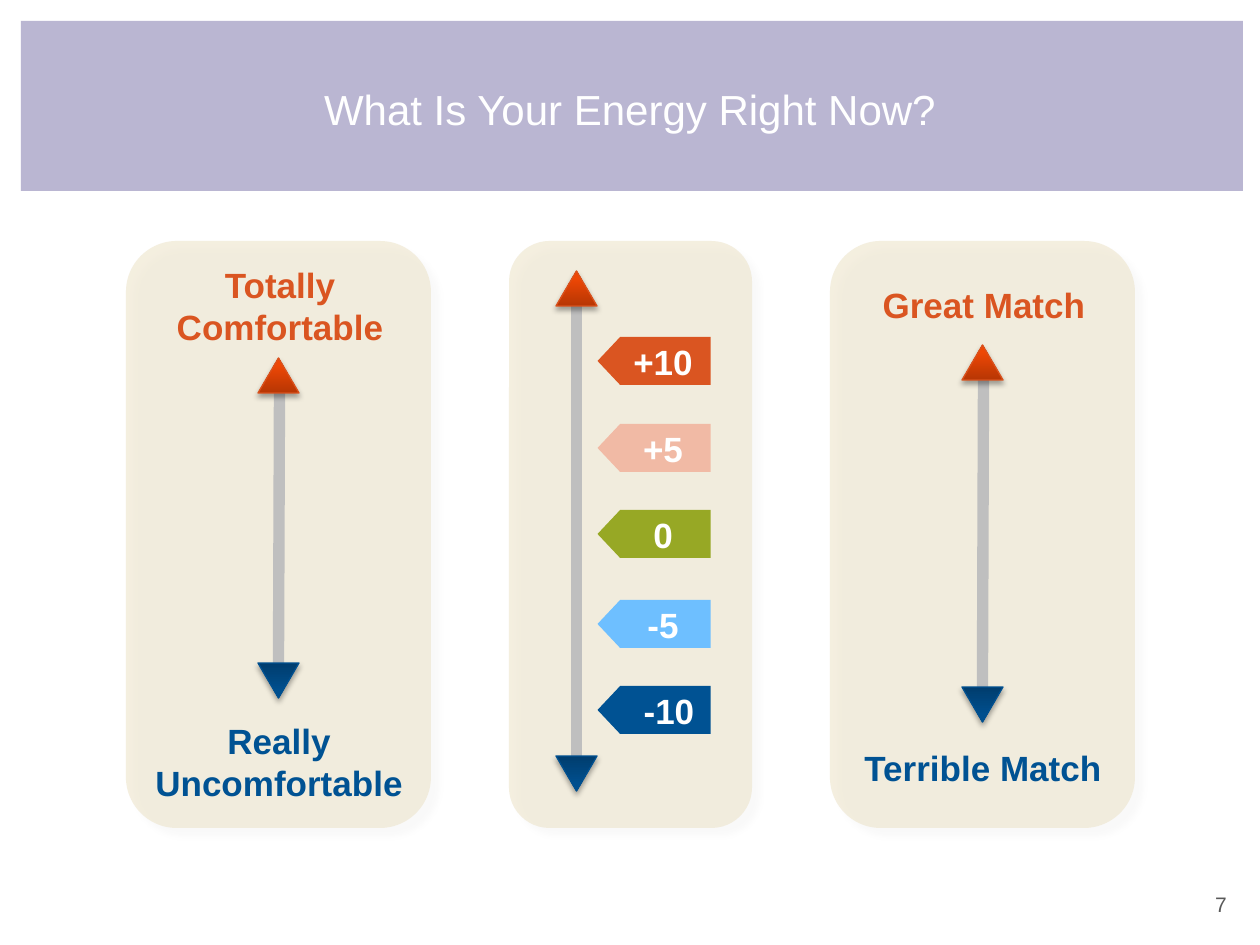
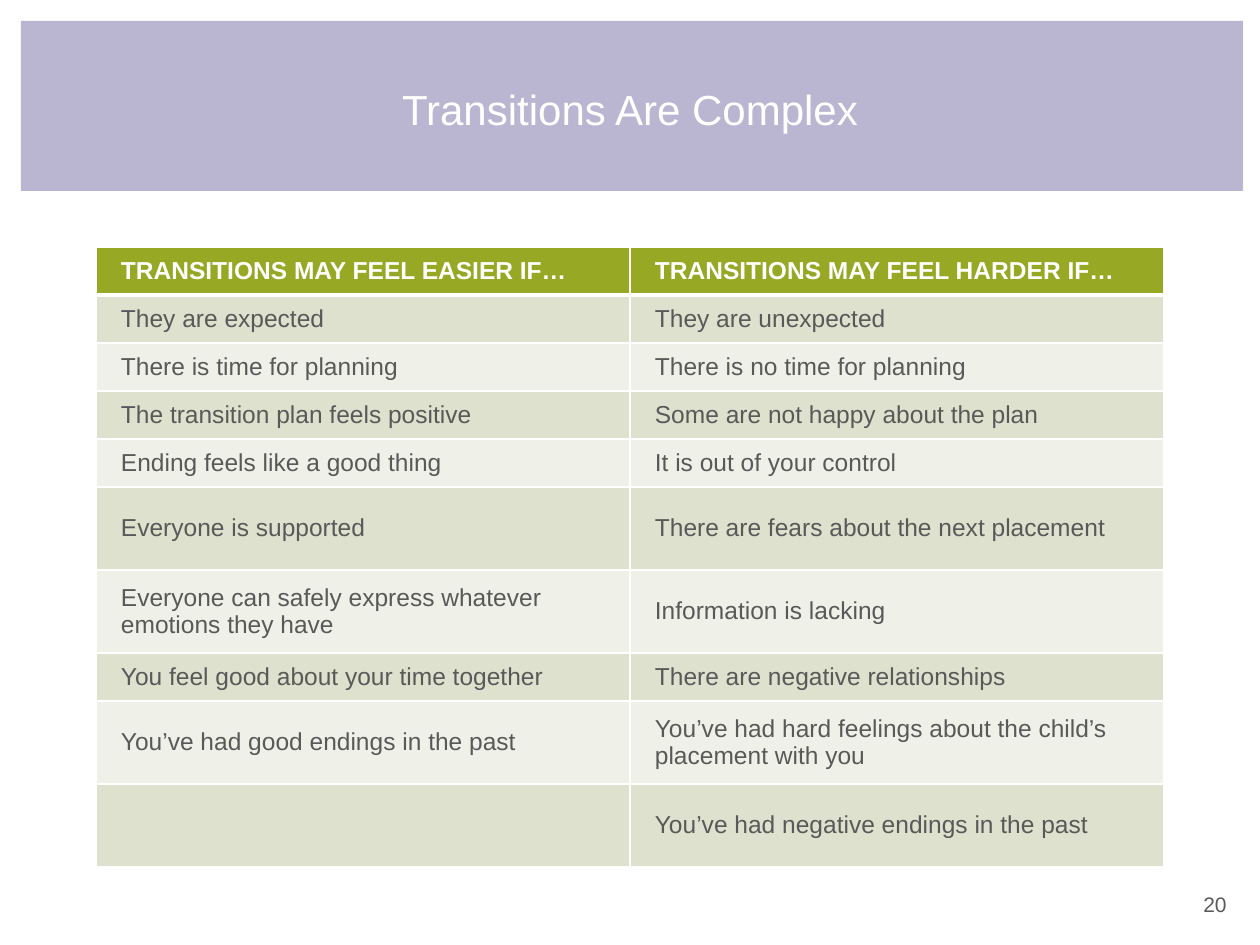
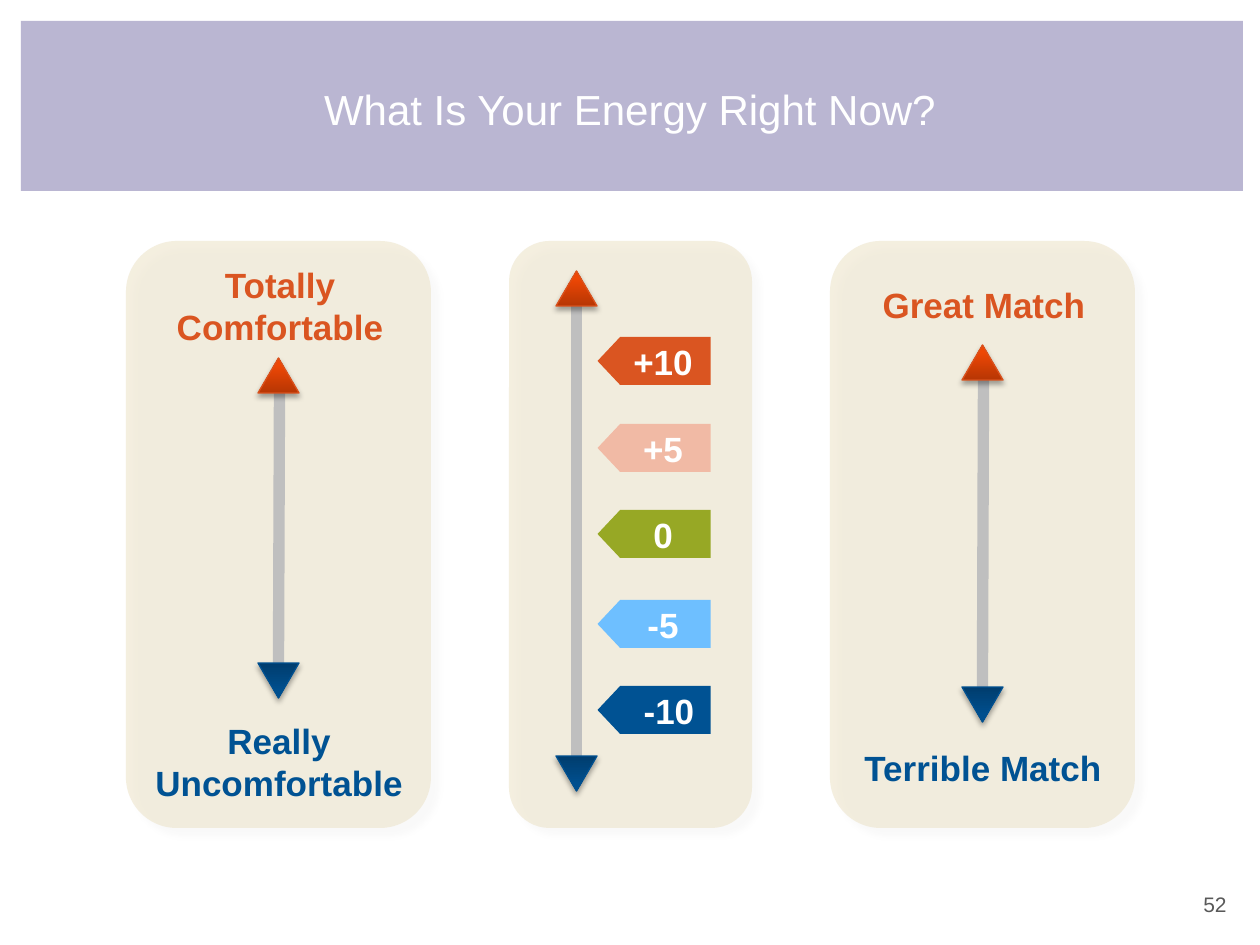
from pptx import Presentation
from pptx.dml.color import RGBColor
from pptx.enum.shapes import MSO_CONNECTOR, MSO_SHAPE
from pptx.enum.text import MSO_ANCHOR, PP_ALIGN
from pptx.oxml import parse_xml
from pptx.oxml.ns import nsdecls, qn
from pptx.util import Pt
from lxml.etree import SubElement

EMU_PER_PX = 914400 / 126
FONT = "Arial"
COLORS = {
    "band": "BAB6D2",
    "white": "FFFFFF",
    "text": "595959",
    "panel": "EDE4CA",
    "shaft": "BFBFBF",
    "high": "DA5521",
    "mid_high": "F1BAA5",
    "neutral": "97A825",
    "mid_low": "6EBFFF",
    "low": "005293",
    "row_dark": "DDE1CD",
    "row_light": "EFF1E8",
    "high_edge": "DA511C",
    "low_edge": "005090",
}
HIGH_GRADIENT = [(0, "B73604"), (80, "EE4705"), (100, "F44501")]
LOW_GRADIENT = [(0, "003D6E"), (80, "004F8E"), (100, "00508F")]

PANEL_TOP, PANEL_HEIGHT = 241, 587
TIP_WIDTH, TIP_HEIGHT = 41, 35
TAG_WIDTH, TAG_HEIGHT = 48, 113
LABEL_LINE, LABEL_PADDING = 42, 13

# Text, colour, vertical centre, label left, label width
LEVELS = [
    ("+10", "high", 361, 615, 96),
    ("+5", "mid_high", 448, 615, 96),
    ("0", "neutral", 534, 615, 96),
    ("-5", "mid_low", 624, 615, 96),
    ("-10", "low", 710, 626, 86),
]

# Easier, harder, row height
TRANSITIONS = [
    ("TRANSITIONS MAY FEEL EASIER IF…", "TRANSITIONS MAY FEEL HARDER IF…", 48),
    ("They are expected", "They are unexpected", 48),
    ("There is time for planning", "There is no time for planning", 48),
    ("The transition plan feels positive", "Some are not happy about the plan", 48),
    ("Ending feels like a good thing", "It is out of your control", 48),
    ("Everyone is supported", "There are fears about the next placement", 83),
    ("Everyone can safely express whatever emotions they have",
     "Information is lacking", 83),
    ("You feel good about your time together", "There are negative relationships", 48),
    ("You’ve had good endings in the past",
     "You’ve had hard feelings about the child’s placement with you", 83),
    ("", "You’ve had negative endings in the past", 83),
]


def px(*lengths):
    return [round(length * EMU_PER_PX) for length in lengths]


def rgb(name):
    return RGBColor.from_string(COLORS[name])


def write(frame, text, size=20, color="text", bold=False, align=PP_ALIGN.LEFT):
    paragraph = frame.paragraphs[0]
    paragraph.alignment = align
    run = paragraph.add_run()
    run.text = text
    run.font.name = FONT
    run.font.size = Pt(size)
    run.font.bold = bold
    run.font.color.rgb = rgb(color)


def add_text(shapes, box, text, anchor=MSO_ANCHOR.TOP, **text_format):
    frame = shapes.add_textbox(*px(*box)).text_frame
    frame.word_wrap = True
    frame.vertical_anchor = anchor
    write(frame, text, **text_format)


def add_label(shapes, box, text, color):
    add_text(shapes, box, text, color=color, bold=True, align=PP_ALIGN.CENTER)


def add_block(shapes, kind, box, color, rotation=0):
    block = shapes.add_shape(kind, *px(*box))
    block.rotation = rotation
    block.fill.solid()
    block.fill.fore_color.rgb = rgb(color)
    block.line.fill.background()
    block.shadow.inherit = False
    return block


def add_shadow(shape, opacity, blur, distance, angle):
    """Cast a black shadow; opacity in percent, lengths in points."""
    effects = shape._element.spPr.find(qn("a:effectLst"))
    shadow = SubElement(
        effects, qn("a:outerShdw"), blurRad=str(Pt(blur)), dist=str(Pt(distance)),
        dir=str(angle * 60000), algn="tl", rotWithShape="0")
    black = SubElement(shadow, qn("a:srgbClr"), val="000000")
    SubElement(black, qn("a:alpha"), val=str(opacity * 1000))


def add_panel(shapes, left, width):
    panel = add_block(shapes, MSO_SHAPE.ROUNDED_RECTANGLE,
                      (left, PANEL_TOP, width, PANEL_HEIGHT), "panel")
    solid_color = panel._element.spPr.find(qn("a:solidFill"))[0]
    SubElement(solid_color, qn("a:alpha"), val="59000")
    add_shadow(panel, 3, 4, 6, 45)


def add_tip(shapes, left, top, edge, gradient, rotation=0):
    tip = add_block(shapes, MSO_SHAPE.ISOSCELES_TRIANGLE,
                    (left, top, TIP_WIDTH, TIP_HEIGHT), edge, rotation)
    tip.line.color.rgb = rgb(edge)
    tip.line.width = Pt(0.75)
    stops = "".join(f'<a:gs pos="{position * 1000}"><a:srgbClr val="{color}"/></a:gs>'
                    for position, color in gradient)
    properties = tip._element.spPr
    properties.replace(properties.find(qn("a:solidFill")), parse_xml(
        f'<a:gradFill {nsdecls("a")} rotWithShape="1"><a:gsLst>{stops}</a:gsLst>'
        '<a:lin ang="16200000" scaled="0"/></a:gradFill>'))
    add_shadow(tip, 35, 3.1, 1.8, 90)


def add_scale(shapes, left, high_top, low_top, lean=0):
    """Draw a shaft between an upper and a lower tip."""
    center = left + TIP_WIDTH / 2
    shaft = shapes.add_connector(
        MSO_CONNECTOR.STRAIGHT,
        *px(center + lean, high_top + TIP_HEIGHT, center, low_top))
    shaft.line.color.rgb = rgb("shaft")
    shaft.line.width = Pt(6.5)
    SubElement(shaft._element.spPr, qn("a:effectLst"))
    add_tip(shapes, left, high_top, "high_edge", HIGH_GRADIENT)
    add_tip(shapes, left, low_top, "low_edge", LOW_GRADIENT, rotation=180)


def add_range_panel(slide, left, high, low, tip_tops, label_tops, lines):
    shapes = slide.shapes.add_group_shape().shapes
    label_height = lines * LABEL_LINE + LABEL_PADDING
    add_panel(shapes, left, 305)
    add_scale(shapes, left + 132, *tip_tops, lean=1)
    add_label(shapes, (left + 23, label_tops[0], 262, label_height), high, "high")
    add_label(shapes, (left + 10, label_tops[1], 286, label_height), low, "low")


def add_level_panel(slide):
    shapes = slide.shapes.add_group_shape().shapes
    add_panel(shapes, 509, 243)
    add_scale(shapes, 556, 271, 756)
    for text, color, center, label_left, label_width in LEVELS:
        add_block(shapes, MSO_SHAPE.FLOWCHART_OFFPAGE_CONNECTOR,
                  (630, center - TAG_HEIGHT / 2, TAG_WIDTH, TAG_HEIGHT),
                  color, rotation=90)
        add_label(shapes, (label_left, center - 27, label_width, 55), text, "white")


def add_edge(cell, side, points):
    edge = parse_xml(
        f'<a:{side} {nsdecls("a")} w="{Pt(points)}"><a:solidFill>'
        f'<a:srgbClr val="{COLORS["white"]}"/></a:solidFill></a:{side}>')
    cell._tc.get_or_add_tcPr().append(edge)


def fill_cell(cell, text, row):
    header = row == 0
    cell.margin_left, cell.margin_right = px(25, 13)
    cell.margin_top, cell.margin_bottom = px(6, 6)
    cell.vertical_anchor = MSO_ANCHOR.MIDDLE
    for side in ("lnL", "lnR"):
        add_edge(cell, side, 1)
    add_edge(cell, "lnT", 3 if row == 1 else 1)
    add_edge(cell, "lnB", 3 if header else 1)
    cell.fill.solid()
    band = "row_dark" if row % 2 else "row_light"
    cell.fill.fore_color.rgb = rgb("neutral" if header else band)
    if text:
        write(cell.text_frame, text, size=14, bold=header,
              color="white" if header else "text")


def add_transition_table(slide):
    height = sum(row_height for *_, row_height in TRANSITIONS)
    table = slide.shapes.add_table(
        len(TRANSITIONS), 2, *px(96, 247, 1068, height)).table
    table.horz_banding = False
    for row, (*texts, row_height) in enumerate(TRANSITIONS):
        table.rows[row].height = px(row_height)[0]
        for column, text in enumerate(texts):
            fill_cell(table.cell(row, column), text, row)


def add_titled_slide(deck, title, number):
    slide = deck.slides.add_slide(deck.slide_layouts[6])
    add_block(slide.shapes, MSO_SHAPE.RECTANGLE, (21, 21, 1222, 170), "band")
    add_text(slide.shapes, (945, 885, 294, 40), str(number), size=12,
             align=PP_ALIGN.RIGHT)
    add_text(slide.shapes, (63, 38, 1134, 141), title, anchor=MSO_ANCHOR.MIDDLE,
             size=24, color="white", align=PP_ALIGN.CENTER)
    return slide


def add_energy_slide(deck, number):
    slide = add_titled_slide(deck, "What Is Your Energy Right Now?", number)
    add_range_panel(slide, 126, "Totally Comfortable", "Really Uncomfortable",
                    tip_tops=(358, 663), label_tops=(257, 713), lines=2)
    add_range_panel(slide, 830, "Great Match", "Terrible Match",
                    tip_tops=(345, 687), label_tops=(277, 740), lines=1)
    add_level_panel(slide)


def main():
    deck = Presentation()
    deck.slide_width, deck.slide_height = px(1260, 945)
    add_energy_slide(deck, 7)
    add_transition_table(add_titled_slide(deck, "Transitions Are Complex", 20))
    add_energy_slide(deck, 52)
    deck.save("out.pptx")


if __name__ == "__main__":
    main()
